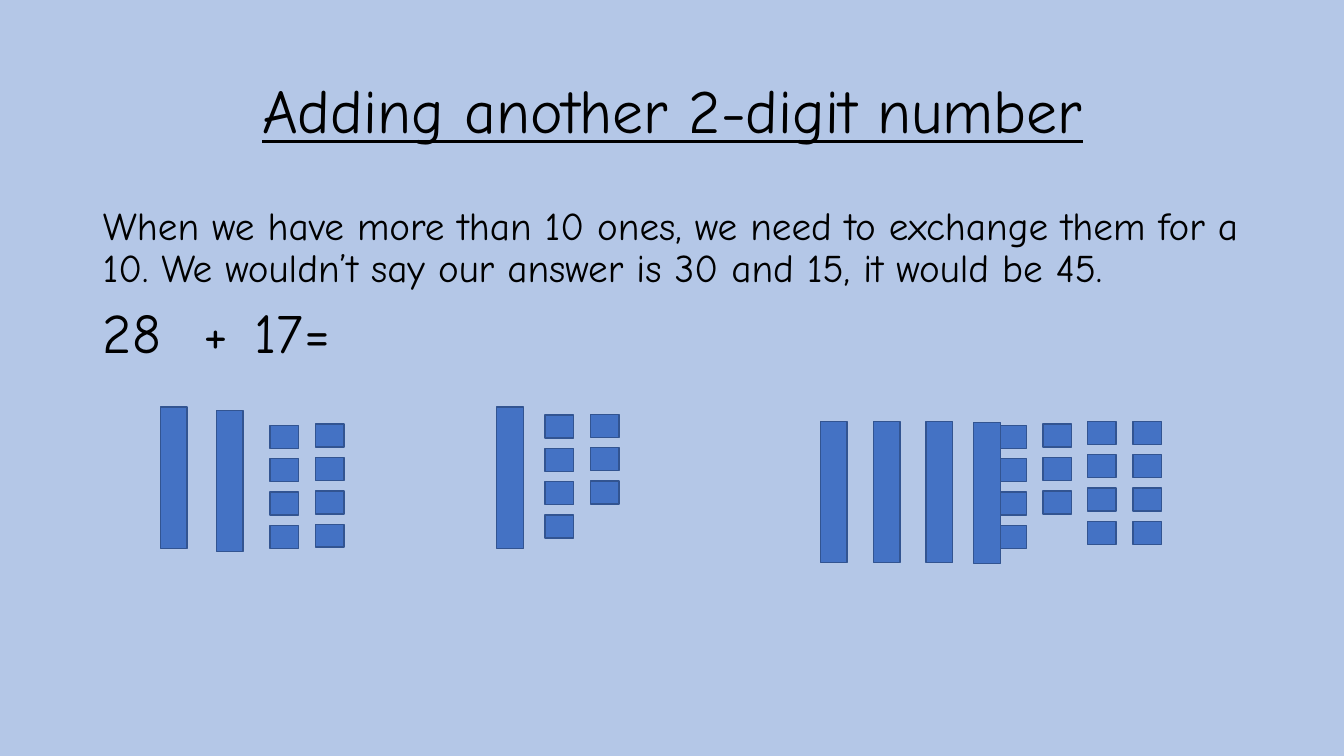
from lxml.etree import SubElement as Sub
from pptx import Presentation
from pptx.dml.color import RGBColor as Rgb
from pptx.enum.shapes import MSO_SHAPE as Kind
from pptx.enum.text import MSO_ANCHOR as Anchor, MSO_AUTO_SIZE as Fit, PP_ALIGN as Align
from pptx.oxml.ns import qn
from pptx.util import Cm, Pt

# Content
TITLE = "Adding another 2-digit number"
INTRO = ("When we have more than 10 ones, we need to exchange them for a 10. "
         "We wouldn’t say our answer is 30 and 15, it would be 45.")
SUM = ["28", "+", "17", "="]
TABS = [7.87, 13.03, 17.74]  # centres of the terms after the first, cm

# Tens rods: left, top (cm)
TENS = [(4.04, 10.26), (5.46, 10.34),
        (12.52, 10.26),
        (20.68, 10.62), (22.01, 10.62), (23.34, 10.62), (24.54, 10.64)]
# Columns of ones: left, top (cm), count
ONES = [(6.81, 10.72, 4), (7.95, 10.69, 4),
        (13.74, 10.46, 4), (14.88, 10.44, 3),
        (25.15, 10.72, 4), (26.29, 10.69, 3),
        (27.41, 10.62, 4), (28.55, 10.62, 4)]
ROD = (0.67, 3.56)
CUBE = (0.72, 0.58)
STEP = 0.84

FONT = "Comic Neue"
HEX = {"back": "B4C7E7", "text": "000000", "fill": "4472C4", "line": "325491"}


def color(key):
    return Rgb.from_string(HEX[key])


def place(part, left, top, wide, high):
    part.left, part.top = Cm(left), Cm(top)
    part.width, part.height = Cm(wide), Cm(high)


def write(para, text, size, align=Align.LEFT, under=None, before=0, tabs=()):
    para.alignment = align
    para.line_spacing = 0.9
    para.space_before = Pt(before)
    props = para._p.get_or_add_pPr()
    props.set("marL", "0")
    props.set("indent", "0")
    Sub(props, qn("a:buNone"))
    if tabs:
        stops = Sub(props, qn("a:tabLst"))
        for pos in tabs:
            Sub(stops, qn("a:tab"), pos=str(Cm(pos)), algn="ctr")
    run = para.add_run()
    run.text = text
    font = run.font
    font.name, font.size, font.underline = FONT, Pt(size), under
    font.color.rgb = color("text")


def block(left, top, size):
    wide, high = size
    box = slide.shapes.add_shape(Kind.RECTANGLE, Cm(left), Cm(top), Cm(wide), Cm(high))
    box.shadow.inherit = False
    box.fill.solid()
    box.fill.fore_color.rgb = color("fill")
    box.line.color.rgb = color("line")
    box.line.width = Pt(1)


# Slide and background
deck = Presentation()
deck.slide_width, deck.slide_height = Cm(33.87), Cm(19.05)
slide = deck.slides.add_slide(deck.slide_layouts[1])
slide.background.fill.solid()
slide.background.fill.fore_color.rgb = color("back")

# Title and text
title, body = slide.placeholders
place(title, 2.34, 1.02, 29.21, 3.68)
place(body, 2.34, 5.08, 29.21, 12.09)
for part, anchor in ((title, Anchor.MIDDLE), (body, Anchor.TOP)):
    frame = part.text_frame
    frame.auto_size = Fit.NONE
    frame.word_wrap = True
    frame.vertical_anchor = anchor
write(title.text_frame.paragraphs[0], TITLE, 44, align=Align.CENTER, under=True)
write(body.text_frame.paragraphs[0], INTRO, 28, before=10)
write(body.text_frame.add_paragraph(), "\t".join(SUM), 40, before=10, tabs=TABS)

# Ones, then the tens in front of them
for left, top, count in ONES:
    for row in range(count):
        block(left, top + row * STEP, CUBE)
for left, top in TENS:
    block(left, top, ROD)

deck.save("out.pptx")
